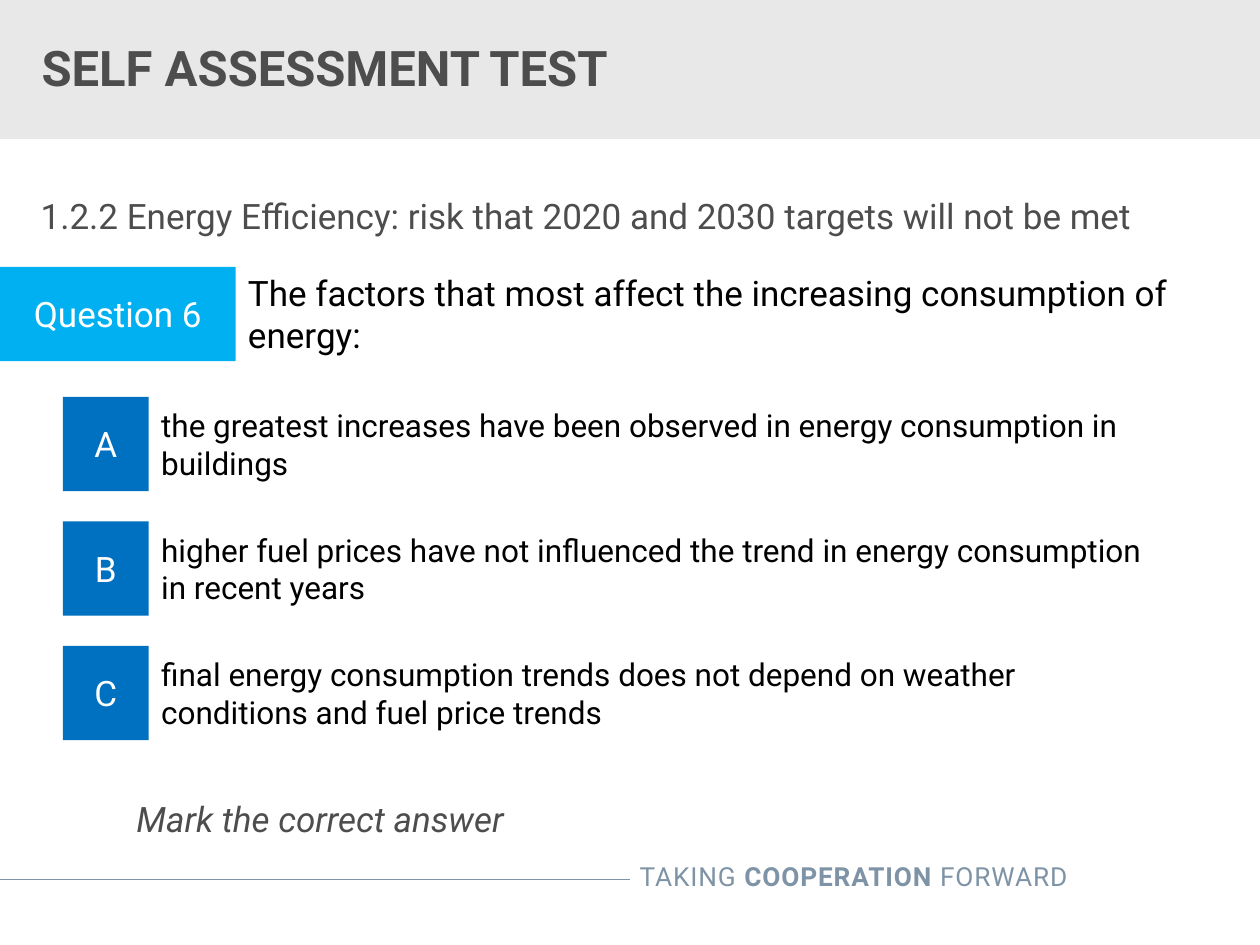
from lxml import etree
from pptx import Presentation
from pptx.dml.color import RGBColor
from pptx.enum import shapes, text
from pptx.oxml import ns
from pptx.util import Cm, Pt

THEME = {
    "font": "Roboto",
    "band": "E8E8E8", "grey": "4D4D4E", "slate": "7E93A5",
    "sky": "00B0F0", "blue": "0070C0", "white": "FFFFFF", "black": "000000",
    "title": 28, "body": 20, "answer": 18, "footer": 15,
}

TITLE = "SELF ASSESSMENT TEST"
TOPIC = "1.2.2 Energy Efficiency: risk that 2020 and 2030 targets will not be met"
QUESTION = ("Question 6", "The factors that most affect the increasing consumption of energy:")
ANSWERS = [
    ("A", "the greatest increases have been observed in energy consumption in buildings"),
    ("B", "higher fuel prices have not influenced the trend in energy consumption in recent years"),
    ("C", "final energy consumption trends does not depend on weather conditions and fuel price trends"),
]
PROMPT = "Mark the correct answer"
FOOTER = [("TAKING ", False), ("COOPERATION", True), (" FORWARD", False)]

PAGE_WIDTH, PAGE_HEIGHT = 25.4, 19.05
ROW_HEIGHT = 1.9
TEXT_WIDTH = 20.7
QUESTION_TOP, QUESTION_WIDTH = 5.38, 4.75
ANSWER_TOP, ANSWER_PITCH = 8, 2.51
LETTER_LEFT, LETTER_WIDTH = 1.27, 1.73


def color(name):
    return RGBColor.from_string(THEME[name])


def write(box, content, size="body", ink="black", bold=False, italic=False,
          align=text.PP_ALIGN.LEFT, anchor=text.MSO_ANCHOR.MIDDLE,
          inset=(0.25, 0.13), spacing=None):
    frame = box.text_frame
    frame.word_wrap = True
    frame.vertical_anchor = anchor
    frame.margin_left = frame.margin_right = Cm(inset[0])
    frame.margin_top = frame.margin_bottom = Cm(inset[1])
    para = frame.paragraphs[0]
    para.alignment = align
    spans = [(content, bold)] if isinstance(content, str) else content
    for words, heavy in spans:
        span = para.add_run()
        span.text = words
        font = span.font
        font.name, font.size = THEME["font"], Pt(THEME[size])
        font.bold, font.italic = heavy, italic
        font.color.rgb = color(ink)
        if spacing:
            span._r.get_or_add_rPr().set("spc", str(spacing))


def add_text(page, place, content, **style):
    box = page.shapes.add_textbox(*map(Cm, place))
    write(box, content, **style)


def add_block(page, place, fill, label=None):
    block = page.shapes.add_shape(shapes.MSO_SHAPE.RECTANGLE, *map(Cm, place))
    block.shadow.inherit = False
    block.fill.solid()
    block.fill.fore_color.rgb = color(fill)
    block.line.fill.background()
    if label:
        write(block, label, ink="white", align=text.PP_ALIGN.CENTER)


def add_rule(page, left, right, top):
    rule = page.shapes.add_connector(
        shapes.MSO_CONNECTOR.STRAIGHT, Cm(left), Cm(top), Cm(right), Cm(top))
    rule.line.color.rgb = color("slate")
    rule.line.width = Pt(0.75)
    etree.SubElement(rule._element.spPr, ns.qn("a:effectLst"))


def add_row(page, left, top, width, fill, label, words, size):
    add_block(page, (left, top, width, ROW_HEIGHT), fill, label)
    add_text(page, (left + width, top, TEXT_WIDTH, ROW_HEIGHT), words, size=size)


def main():
    deck = Presentation()
    deck.slide_width, deck.slide_height = Cm(PAGE_WIDTH), Cm(PAGE_HEIGHT)
    page = deck.slides.add_slide(deck.slide_layouts[6])

    add_rule(page, 0, PAGE_WIDTH / 2, 17.73)
    add_block(page, (0, 0, PAGE_WIDTH, 2.8), "band")
    add_text(page, (9.85, 17.22, 11.92, 0.9), FOOTER, size="footer", ink="slate",
             align=text.PP_ALIGN.RIGHT, anchor=text.MSO_ANCHOR.TOP, spacing=50)
    add_text(page, (0, 0.4, 18.3, 1.9), TITLE, size="title", ink="grey",
             bold=True, inset=(0.84, 0.13))
    add_text(page, (0.82, 3.92, 23.77, 0.87), TOPIC, ink="grey",
             anchor=text.MSO_ANCHOR.TOP, inset=(0, 0))

    add_row(page, 0, QUESTION_TOP, QUESTION_WIDTH, "sky", *QUESTION, "body")
    for index, (letter, words) in enumerate(ANSWERS):
        add_row(page, LETTER_LEFT, ANSWER_TOP + index * ANSWER_PITCH, LETTER_WIDTH,
                "blue", letter, words, "answer")

    add_text(page, (2.75, 16.08, 12, 0.87), PROMPT, ink="grey", italic=True,
             anchor=text.MSO_ANCHOR.TOP, inset=(0, 0))
    deck.save("out.pptx")


if __name__ == "__main__":
    main()
